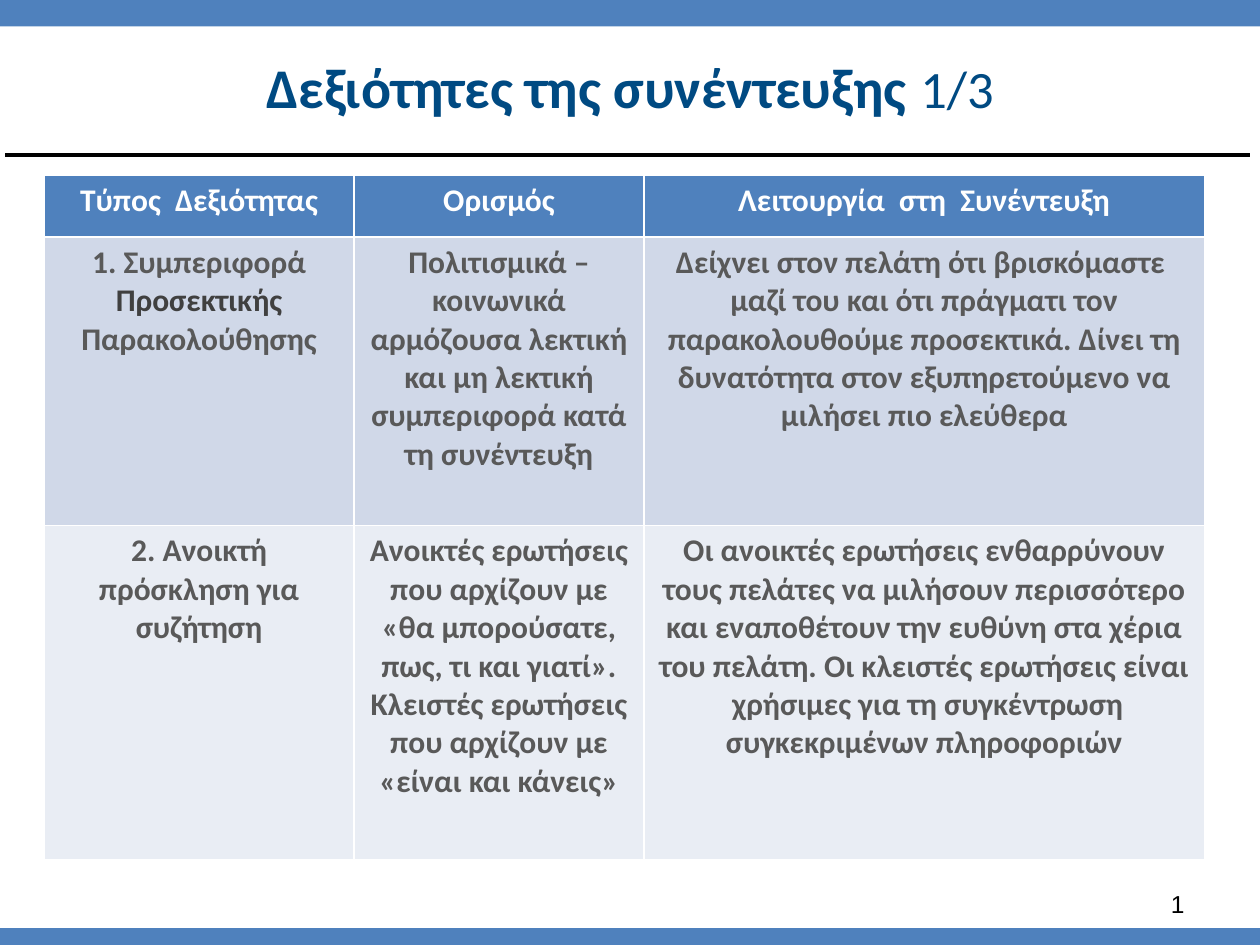
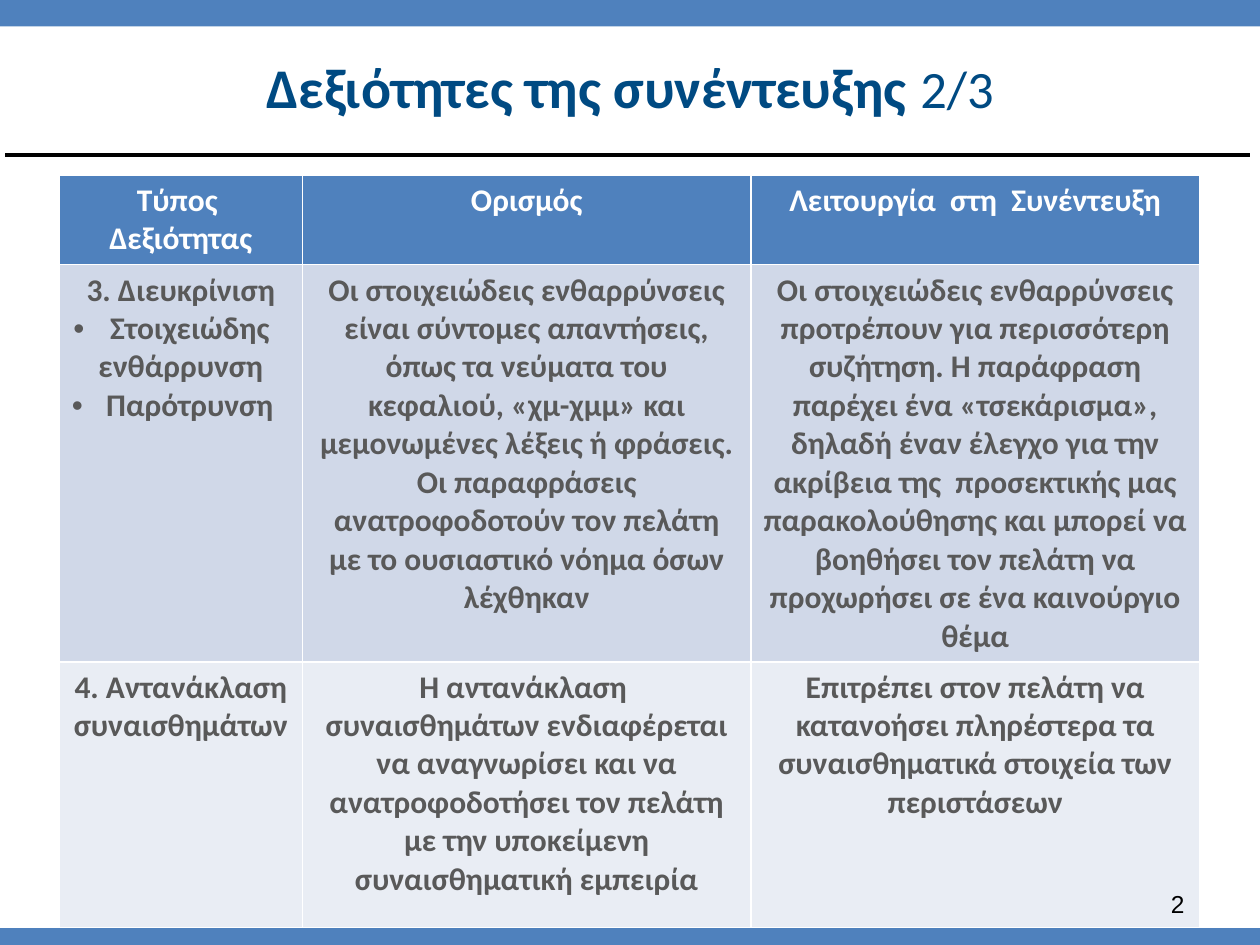
"""Builds two slides of interview skills, each a titled table."""
from dataclasses import dataclass

from lxml import etree
from pptx import Presentation
from pptx.dml.color import RGBColor
from pptx.enum.shapes import MSO_CONNECTOR, MSO_SHAPE
from pptx.enum.text import MSO_ANCHOR, MSO_AUTO_SIZE, PP_ALIGN
from pptx.oxml.ns import qn
from pptx.util import Inches, Pt

CENTER, RIGHT = PP_ALIGN.CENTER, PP_ALIGN.RIGHT
MIDDLE = MSO_ANCHOR.MIDDLE
NO_AUTOFIT = MSO_AUTO_SIZE.NONE
RECTANGLE = MSO_SHAPE.RECTANGLE
STRAIGHT = MSO_CONNECTOR.STRAIGHT

COLORS = {
    "band": "4F81BD",
    "rule": "000000",
    "title": "004A82",
    "white": "FFFFFF",
    "body": "595959",
    "emphasis": "404040",
    "number": "000000",
}
ROW_FILLS = ["D0D8E8", "E9EDF4"]
HEADINGS = ["Τύπος  Δεξιότητας", "Ορισμός", "Λειτουργία  στη  Συνέντευξη"]
TITLE = "Δεξιότητες της συνέντευξης "
TITLE_FONT, NUMBER_FONT = "Calibri", "Arial"
TABLE_TOP = 1.39
TITLE_ONLY = 5


@dataclass
class Band:
    """A coloured bar across the slide, in inches."""
    left: float
    top: float
    width: float
    height: float


@dataclass
class Skill:
    """One table row, with an optional emphasised word and bullets."""
    name: str
    definition: str
    function: str
    emphasis: str = ""
    bullets: tuple[str, ...] = ()


@dataclass
class SkillPage:
    """The content and the table measures of one slide."""
    counter: str
    left: float
    widths: list[float]
    heights: list[float]
    skills: list[Skill]


BANDS = [Band(0, -0.03, 10, 0.32), Band(-0.04, 7.37, 10.04, 0.13)]

PAGES = [
    SkillPage("1/3", 0.35, [2.46, 2.3, 4.45], [0.49, 2.29, 2.65], [
        Skill(
            "1. Συμπεριφορά Προσεκτικής Παρακολούθησης",
            "Πολιτισμικά – κοινωνικά αρμόζουσα λεκτική και μη λεκτική "
            "συμπεριφορά κατά τη συνέντευξη",
            "Δείχνει στον πελάτη ότι βρισκόμαστε  μαζί του και ότι πράγματι "
            "τον παρακολουθούμε προσεκτικά. Δίνει τη δυνατότητα στον "
            "εξυπηρετούμενο να μιλήσει πιο ελεύθερα",
            emphasis="Προσεκτικής",
        ),
        Skill(
            "2. Ανοικτή πρόσκληση για συζήτηση",
            "Ανοικτές ερωτήσεις που αρχίζουν με «θα μπορούσατε, πως, τι και "
            "γιατί». Κλειστές ερωτήσεις που αρχίζουν με «είναι και κάνεις»",
            "Οι ανοικτές ερωτήσεις ενθαρρύνουν τους πελάτες να μιλήσουν "
            "περισσότερο και εναποθέτουν την ευθύνη στα χέρια του πελάτη. "
            "Οι κλειστές ερωτήσεις είναι  χρήσιμες για τη συγκέντρωση "
            "συγκεκριμένων πληροφοριών",
        ),
    ]),
    SkillPage("2/3", 0.47, [1.93, 3.56, 3.56], [0.67, 2.97, 2.11], [
        Skill(
            "3. Διευκρίνιση",
            "Οι στοιχειώδεις ενθαρρύνσεις είναι σύντομες απαντήσεις, όπως τα "
            "νεύματα του κεφαλιού, «χμ-χμμ» και μεμονωμένες λέξεις ή "
            "φράσεις. Οι παραφράσεις ανατροφοδοτούν τον πελάτη με το "
            "ουσιαστικό νόημα όσων λέχθηκαν",
            "Οι στοιχειώδεις ενθαρρύνσεις προτρέπουν για περισσότερη "
            "συζήτηση. Η παράφραση παρέχει ένα «τσεκάρισμα», δηλαδή έναν "
            "έλεγχο για την ακρίβεια της  προσεκτικής μας παρακολούθησης και "
            "μπορεί να βοηθήσει τον πελάτη να προχωρήσει σε ένα καινούργιο "
            "θέμα",
            bullets=(" Στοιχειώδης ενθάρρυνση", " Παρότρυνση"),
        ),
        Skill(
            "4. Αντανάκλαση συναισθημάτων",
            "Η αντανάκλαση  συναισθημάτων ενδιαφέρεται να αναγνωρίσει και να "
            "ανατροφοδοτήσει τον πελάτη με την υποκείμενη συναισθηματική "
            "εμπειρία",
            "Επιτρέπει στον πελάτη να κατανοήσει πληρέστερα τα "
            "συναισθηματικά στοιχεία των περιστάσεων",
        ),
    ]),
]


def rgb(name: str) -> RGBColor:
    """Return the named colour."""
    return RGBColor.from_string(COLORS[name])


def style_span(span, size: float, color: str, bold: bool = True,
               font: str = TITLE_FONT) -> None:
    """Format one run."""
    span.font.name = font
    span.font.size = Pt(size)
    span.font.bold = bold
    span.font.color.rgb = rgb(color)


def add_bullet(para) -> None:
    """Give a paragraph a round bullet without an indent."""
    properties = para._p.get_or_add_pPr()
    etree.SubElement(properties, qn("a:buFont"), typeface="Arial")
    etree.SubElement(properties, qn("a:buChar"), char="•")


def add_frame(layout, page) -> None:
    """Draw the rule and bands and place them on the shared layout."""
    rule = page.shapes.add_connector(
        STRAIGHT, Inches(0.04), Inches(1.23), Inches(9.92), Inches(1.23))
    rule.line.color.rgb = rgb("rule")
    rule.line.width = Pt(2.25)
    etree.SubElement(rule.element.spPr, qn("a:effectLst"))
    layout.shapes.element.append(rule.element)
    for band in BANDS:
        bar = page.shapes.add_shape(
            RECTANGLE, Inches(band.left), Inches(band.top),
            Inches(band.width), Inches(band.height))
        bar.shadow.inherit = False
        bar.fill.solid()
        bar.fill.fore_color.rgb = rgb("band")
        bar.line.color.rgb = rgb("band")
        bar.line.width = Pt(0.75)
        layout.shapes.element.append(bar.element)


def fill_title(page, counter: str) -> None:
    """Write the title and its lighter counter."""
    title = page.shapes.title
    title.left, title.top = Inches(0), Inches(0.21)
    title.width, title.height = Inches(10), Inches(0.94)
    title.fill.solid()
    title.fill.fore_color.rgb = rgb("white")
    frame = title.text_frame
    frame.auto_size = NO_AUTOFIT
    frame.vertical_anchor = MIDDLE
    frame.text = TITLE
    para = frame.paragraphs[0]
    para.alignment = CENTER
    style_span(para.runs[0], 32, "title")
    span = para.add_run()
    span.text = counter
    style_span(span, 30, "title", bold=False)


def fill_cell(cell, text: str, fill: RGBColor, color: str,
              emphasis: str = "", bullets: tuple[str, ...] = ()) -> None:
    """Write one cell, with its emphasised word and bullets."""
    cell.fill.solid()
    cell.fill.fore_color.rgb = fill
    frame = cell.text_frame
    first = frame.paragraphs[0]
    pieces = text.partition(emphasis) if emphasis else (text,)
    for piece in pieces:
        span = first.add_run()
        span.text = piece
        style_span(span, 18, "emphasis" if piece == emphasis else color)
    first.alignment = CENTER
    for bullet in bullets:
        para = frame.add_paragraph()
        para.text = bullet
        para.alignment = CENTER
        add_bullet(para)
        style_span(para.runs[0], 18, color)


def add_skill_table(page, content: SkillPage) -> None:
    """Draw the table of skills."""
    table = page.shapes.add_table(
        len(content.heights), len(content.widths),
        Inches(content.left), Inches(TABLE_TOP),
        Inches(sum(content.widths)), Inches(sum(content.heights))).table
    for column, width in zip(table.columns, content.widths):
        column.width = Inches(width)
    for row, height in zip(table.rows, content.heights):
        row.height = Inches(height)
    for column, heading in enumerate(HEADINGS):
        fill_cell(table.cell(0, column), heading, rgb("band"), "white")
    for row, (skill, shade) in enumerate(zip(content.skills, ROW_FILLS), 1):
        fill = RGBColor.from_string(shade)
        fill_cell(table.cell(row, 0), skill.name, fill, "body",
                  skill.emphasis, skill.bullets)
        fill_cell(table.cell(row, 1), skill.definition, fill, "body")
        fill_cell(table.cell(row, 2), skill.function, fill, "body")


def add_page_number(page, number: int) -> None:
    """Write the page number at the bottom right."""
    box = page.shapes.add_textbox(
        Inches(7.17), Inches(7.01), Inches(2.33), Inches(0.28))
    frame = box.text_frame
    frame.word_wrap = True
    frame.text = str(number)
    para = frame.paragraphs[0]
    para.alignment = RIGHT
    style_span(para.runs[0], 14, "number", bold=False, font=NUMBER_FONT)


def main() -> None:
    """Build and save the deck."""
    deck = Presentation()
    deck.slide_width, deck.slide_height = Inches(10), Inches(7.5)
    layout = deck.slide_layouts[TITLE_ONLY]
    for number, content in enumerate(PAGES, 1):
        page = deck.slides.add_slide(layout)
        if number == 1:
            add_frame(layout, page)
        fill_title(page, content.counter)
        add_skill_table(page, content)
        add_page_number(page, number)
    deck.save("out.pptx")


if __name__ == "__main__":
    main()
